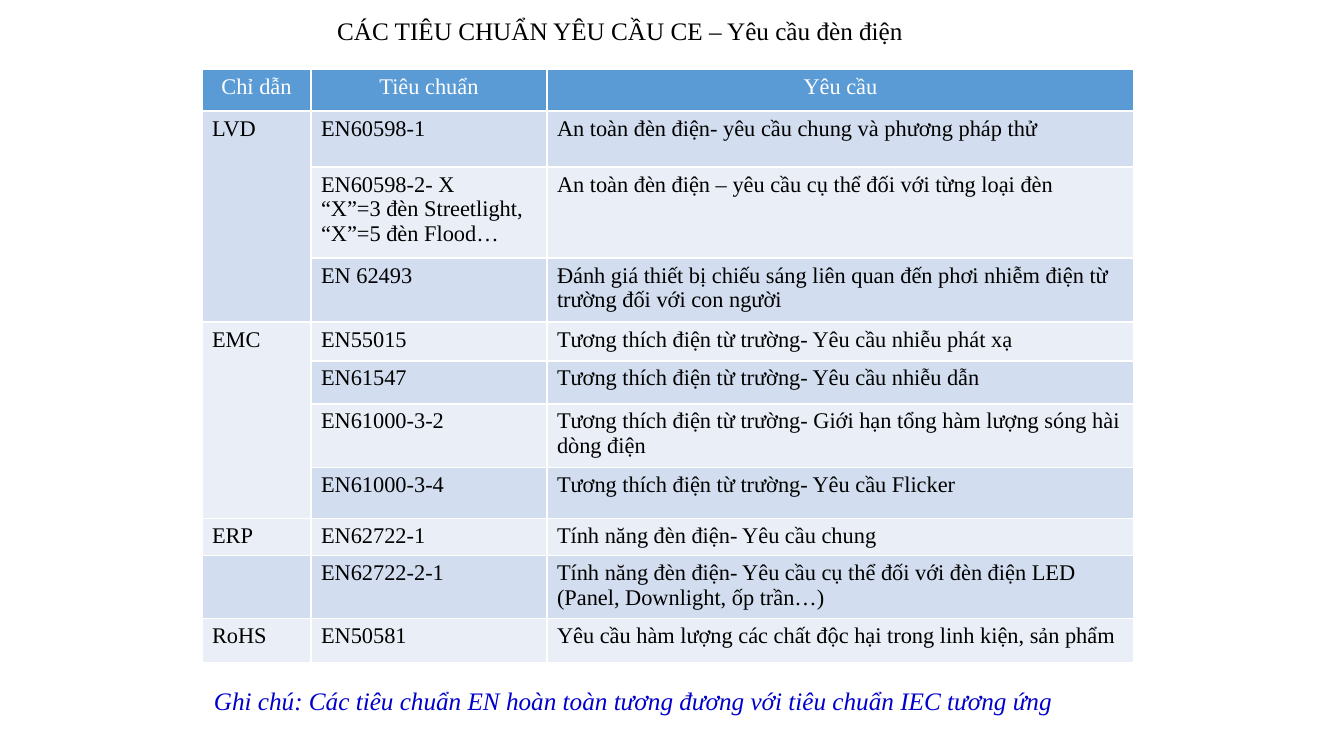
from pptx import Presentation
from pptx.dml.color import RGBColor as Rgb
from pptx.enum.text import MSO_ANCHOR as Anchor, MSO_AUTO_SIZE as Fit, PP_ALIGN as Align
from pptx.util import Pt

SCALE = 12192000 / 1344
FONT = "Times New Roman"
COLORS = {
    "head": "5B9BD5",
    "dark": "D2DEEF",
    "light": "EAEFF7",
    "white": "FFFFFF",
    "black": "000000",
    "note": "0000CC",
}
WIDTHS = [109, 236, 587]
HEIGHTS = [42, 56, 91, 64, 39, 43, 64, 51, 37, 63, 44]
MERGES = [(1, 3), (4, 7)]
ROWS = [
    ("Chỉ dẫn", "Tiêu chuẩn", "Yêu cầu"),
    ("LVD", "EN60598-1", "An toàn đèn điện- yêu cầu chung và phương pháp thử"),
    ("", "EN60598-2- X\n“X”=3 đèn Streetlight, “X”=5 đèn Flood…",
     "An toàn đèn điện – yêu cầu cụ thể đối với từng loại đèn"),
    ("", "EN 62493",
     "Đánh giá thiết bị chiếu sáng liên quan đến phơi nhiễm điện từ trường đối với con người"),
    ("EMC", "EN55015", "Tương thích điện từ trường- Yêu cầu nhiễu phát xạ"),
    ("", "EN61547", "Tương thích điện từ trường- Yêu cầu nhiễu dẫn"),
    ("", "EN61000-3-2",
     "Tương thích điện từ trường- Giới hạn tổng hàm lượng sóng hài dòng điện"),
    ("", "EN61000-3-4", "Tương thích điện từ trường- Yêu cầu Flicker"),
    ("ERP", "EN62722-1", "Tính năng đèn điện- Yêu cầu chung"),
    ("", "EN62722-2-1",
     "Tính năng đèn điện- Yêu cầu cụ thể đối với đèn điện LED (Panel, Downlight, ốp trần…)"),
    ("RoHS", "EN50581", "Yêu cầu hàm lượng các chất độc hại trong linh kiện, sản phẩm"),
]


def px(num):
    return round(num * SCALE)


def color(name):
    return Rgb.from_string(COLORS[name])


def write(frame, text, size, ink, align=Align.LEFT, italic=False):
    for pos, line in enumerate(text.split("\n")):
        para = frame.add_paragraph() if pos else frame.paragraphs[0]
        para.alignment = align
        run = para.add_run()
        run.text = line
        font = run.font
        font.name, font.size = FONT, Pt(size)
        font.bold, font.italic = False, italic
        font.color.rgb = color(ink)


def add_title(slide, text, left, top, width, height):
    title = slide.shapes.title
    title.left, title.top = px(left), px(top)
    title.width, title.height = px(width), px(height)
    frame = title.text_frame
    frame.auto_size = Fit.NONE
    frame.vertical_anchor = Anchor.TOP
    write(frame, text, 18, "black")


def add_note(slide, text, left, top, width, height):
    box = slide.shapes.add_textbox(px(left), px(top), px(width), px(height))
    box.text_frame.word_wrap = True
    write(box.text_frame, text, 18, "note", italic=True)


def add_grid(slide, left, top):
    table = slide.shapes.add_table(
        len(ROWS), len(WIDTHS), px(left), px(top), px(sum(WIDTHS)), px(sum(HEIGHTS))
    ).table
    for col, width in zip(table.columns, WIDTHS):
        col.width = px(width)
    for row, height in zip(table.rows, HEIGHTS):
        row.height = px(height)
    for first, last in MERGES:
        table.cell(first, 0).merge(table.cell(last, 0))
    for row, texts in enumerate(ROWS):
        head = row == 0
        fill = "head" if head else "dark" if row % 2 else "light"
        for col, text in enumerate(texts):
            cell = table.cell(row, col)
            cell.fill.solid()
            cell.fill.fore_color.rgb = color(fill)
            if text:
                write(cell.text_frame, text, 16, "white" if head else "black",
                      Align.CENTER if head else Align.LEFT)


def main():
    deck = Presentation()
    deck.slide_width, deck.slide_height = px(1344), px(756)
    slide = deck.slides.add_slide(deck.slide_layouts[5])
    add_title(slide, "CÁC TIÊU CHUẨN YÊU CẦU CE – Yêu cầu đèn điện", 327, 10, 655, 40)
    add_grid(slide, 202, 69)
    add_note(slide,
             "Ghi chú: Các tiêu chuẩn EN hoàn toàn tương đương với tiêu chuẩn IEC tương ứng",
             204, 680, 922, 40)
    deck.save("out.pptx")


if __name__ == "__main__":
    main()
